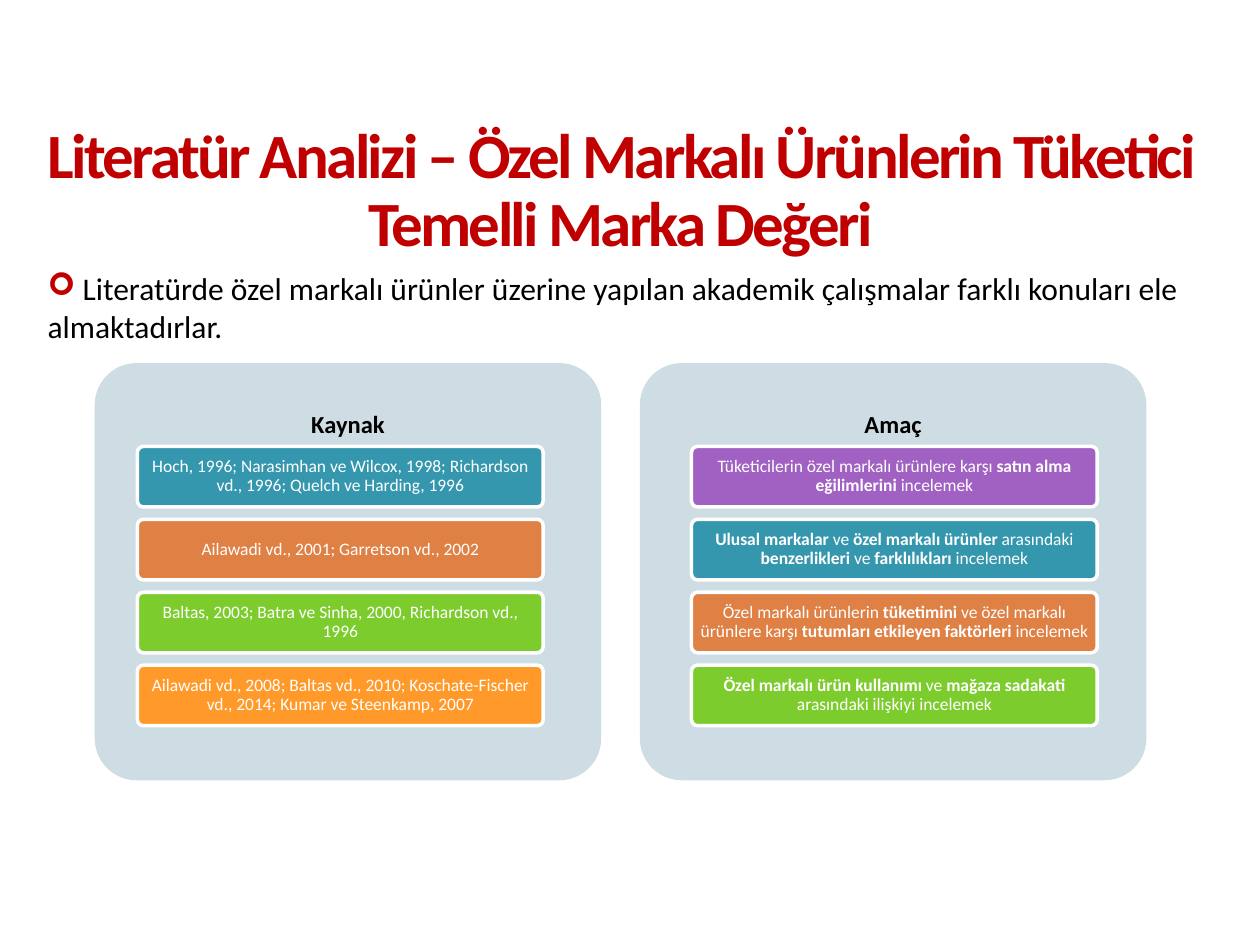
from lxml.etree import SubElement
from pptx import Presentation
from pptx.dml.color import RGBColor
from pptx.enum.shapes import MSO_SHAPE
from pptx.enum.text import MSO_ANCHOR, PP_ALIGN
from pptx.oxml.ns import qn
from pptx.util import Cm, Pt

COLORS = {
    "red": "C00000", "black": "000000", "white": "FFFFFF", "panel": "CEDDE3",
    "teal": "3497AE", "rust": "DF8045", "green": "7DCC2E",
    "orange": "FF9929", "purple": "A061C3",
}
TITLE = "Literatür Analizi – Özel Markalı Ürünlerin Tüketici Temelli Marka Değeri"
INTRO = (" Literatürde özel markalı ürünler üzerine yapılan akademik çalışmalar "
         "farklı konuları ele almaktadırlar.")
SOURCES = [
    ("teal", "Hoch, 1996; Narasimhan ve Wilcox, 1998; Richardson vd., 1996; "
             "Quelch ve Harding, 1996"),
    ("rust", "Ailawadi vd., 2001; Garretson vd., 2002"),
    ("green", "Baltas, 2003; Batra ve Sinha, 2000, Richardson vd., 1996"),
    ("orange", "Ailawadi vd., 2008; Baltas vd., 2010; Koschate-Fischer vd., 2014; "
               "Kumar ve Steenkamp, 2007"),
]
AIMS = [
    ("purple", "Tüketicilerin özel markalı ürünlere karşı "
               "**satın alma eğilimlerini **incelemek"),
    ("teal", "**Ulusal markalar **ve **özel markalı ürünler **arasındaki "
             "**benzerlikleri** ve **farklılıkları** incelemek"),
    ("rust", "Özel markalı ürünlerin **tüketimini** ve özel markalı ürünlere karşı "
             "**tutumları etkileyen faktörleri **incelemek"),
    ("green", "**Özel markalı ürün kullanımı **ve **mağaza sadakati **"
              "arasındaki ilişkiyi incelemek"),
]
CENTERED = {"alignment": PP_ALIGN.CENTER, "line_spacing": 0.9}


def rgb(name):
    """Return the named colour."""
    return RGBColor.from_string(COLORS[name])


def apply(obj, values):
    """Set each attribute of obj from a dict."""
    for name, value in values.items():
        setattr(obj, name, value)


def write(tf, text, size, color, para, margins=(0, 0), anchor=MSO_ANCHOR.MIDDLE):
    """Fill a text frame, with bold between double asterisks."""
    mx, my = (Cm(m) for m in margins)
    apply(tf, {"word_wrap": True, "vertical_anchor": anchor, "margin_left": mx,
               "margin_right": mx, "margin_top": my, "margin_bottom": my})
    p = tf.paragraphs[0]
    apply(p, para)
    for i, part in enumerate(text.split("**")):
        if part:
            r = p.add_run()
            r.text = part
            apply(r.font, {"name": "Calibri", "size": Pt(size), "bold": i % 2 == 1})
            r.font.color.rgb = rgb(color)
    return p


def add_round_rect(s, box, fill, line=None):
    """Draw a rounded rectangle with an optional outline."""
    sp = s.shapes.add_shape(MSO_SHAPE.ROUNDED_RECTANGLE, *map(Cm, box))
    sp.adjustments[0] = 0.1
    sp.shadow.inherit = False
    sp.fill.solid()
    sp.fill.fore_color.rgb = rgb(fill)
    if line:
        sp.line.color.rgb = rgb(line)
        sp.line.width = Pt(2)
    else:
        sp.line.fill.background()
    return sp


def add_title(s, box):
    """Place the tightly spaced slide title."""
    tf = s.shapes.add_textbox(*map(Cm, box)).text_frame
    p = write(tf, f"**{TITLE}**", 36, "red", CENTERED, anchor=MSO_ANCHOR.TOP)
    p.runs[0].font._element.set("spc", "-150")


def add_intro(s, box):
    """Place the introductory statement with its arrow bullet."""
    tf = s.shapes.add_textbox(*map(Cm, box)).text_frame
    p = write(tf, INTRO, 18, "black", {"space_after": Pt(12)}, (0.25, 0.13), MSO_ANCHOR.TOP)
    tf.margin_top = Cm(1.32)
    pPr = p._p.get_or_add_pPr()
    clr = SubElement(pPr, qn("a:buClr"))
    SubElement(clr, qn("a:srgbClr")).set("val", COLORS["red"])
    SubElement(pPr, qn("a:buFont")).set("typeface", "Wingdings")
    SubElement(pPr, qn("a:buChar")).set("char", "➢")


def add_panel(s, box, heading, items, indent):
    """Place a panel with a heading and a stack of equal cards."""
    x, y, w, h = box
    sp = add_round_rect(s, box, "panel")
    tf = s.shapes.add_textbox(Cm(x), Cm(y), Cm(w), Cm(0.3 * h)).text_frame
    write(tf, f"**{heading}**", 14, "black", CENTERED, (0.15, 0.15))
    for i, (fill, text) in enumerate(items):
        card = (x + indent, y + 1.68 + 1.47 * i, 8.18, 1.22)
        sp = add_round_rect(s, card, fill, "white")
        write(sp.text_frame, text, 10, "white", CENTERED, (0.08, 0.05))


def main():
    """Build the slide and save it."""
    prs = Presentation()
    apply(prs, {"slide_width": Cm(25.4), "slide_height": Cm(19.05)})
    s = prs.slides.add_slide(prs.slide_layouts[6])
    add_title(s, (0.71, 2.51, 23.6, 2.21))
    add_intro(s, (0.71, 4.11, 24.41, 5.38))
    add_panel(s, (1.91, 7.32, 10.21, 8.41), "Kaynak", SOURCES, 0.86)
    add_panel(s, (12.9, 7.32, 10.21, 8.41), "Amaç", AIMS, 1.04)
    prs.save("out.pptx")


if __name__ == "__main__":
    main()
